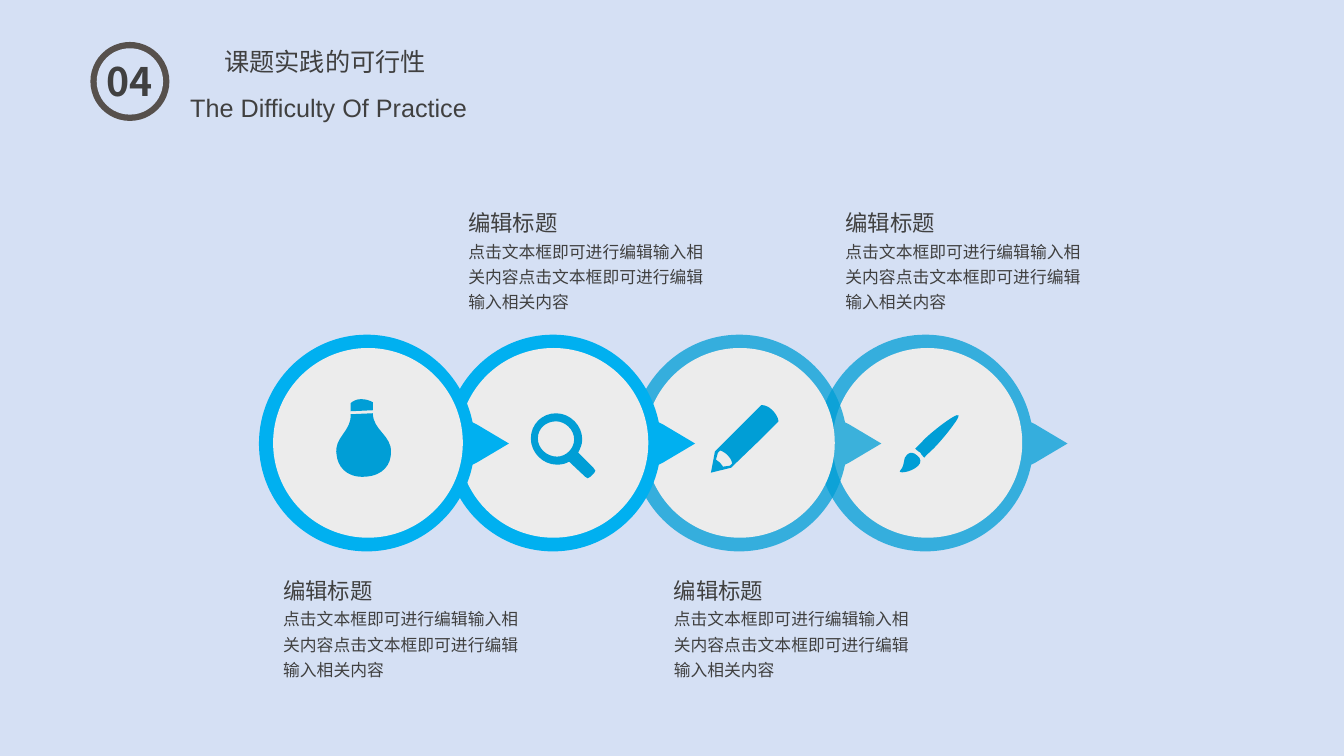
from lxml.etree import SubElement
from pptx import Presentation
from pptx.dml.color import RGBColor
from pptx.enum.shapes import MSO_SHAPE
from pptx.enum.text import MSO_ANCHOR, MSO_AUTO_SIZE, PP_ALIGN
from pptx.oxml.ns import qn
from pptx.util import Pt

CHINESE_FONT = "Noto Sans CJK SC"
DARK, BLUE, BRIGHT_BLUE = "404040", "009ED6", "00B0F0"
BACKGROUND, RING_BROWN, DISC_GREY = "D5E0F4", "56504C", "ECECEC"
BODY = "点击文本框即可进行编辑输入相关内容点击文本框即可进行编辑输入相关内容"

# Outlines are lists of contours, in hundredths of an inch from the ring centre.
# A pair is a straight segment; six numbers are a cubic curve.
POINTER_RING = [[
    (141, 0), (109, -19, 109, -19, 109, -19), (105, -21, 105, -21, 105, -21),
    (95, -70, 52, -108, 0, -108), (-59, -108, -107, -59, -107, 0),
    (-107, 59, -59, 107, 0, 107), (52, 107, 95, 70, 105, 21),
    (109, 19, 109, 19, 109, 19), (141, 0),
]]
BULB_CAP = [
    [(6, -41), (2, -43, -1, -44, -6, -44), (-10, -44, -14, -42, -16, -40),
     (-16, -32), (6, -33), (6, -33, 6, -41, 6, -41)],
]
BULB = [
    [(-16, -29), (-15, -12, -33, -6, -30, 11), (-29, 22, -21, 34, -2, 33),
     (17, 32, 24, 20, 24, 9), (25, -8, 6, -13, 6, -30),
     (6, -30, -16, -29, -16, -29)],
]
MAGNIFIER = [
    [(-15, -5), (-15, -15, -7, -22, 3, -22), (12, -22, 21, -14, 21, -4),
     (21, 5, 13, 13, 4, 13), (-6, 13, -15, 5, -15, -5)],
    [(40, 24), (25, 9), (27, 5, 29, 1, 29, -4), (29, -18, 17, -30, 3, -30),
     (-11, -30, -22, -19, -22, -5), (-22, 9, -10, 21, 4, 21),
     (8, 21, 13, 20, 16, 18), (32, 33), (33, 35, 36, 35, 37, 33),
     (41, 29), (43, 28, 42, 26, 40, 24)],
]
PENCIL = [
    [(-9, 22), (-16, 23), (-17, 22, -17, 21, -19, 19),
     (-20, 18, -22, 17, -23, 16), (-21, 9), (-19, 7),
     (-19, 7, -16, 7, -11, 12), (-7, 16, -7, 20, -7, 20),
     (-7, 20, -9, 22, -9, 22)],
    [(33, -33), (27, -39, 22, -38, 22, -38), (1, -17), (-24, 8), (-28, 29),
     (-8, 24), (17, 0), (39, -22), (39, -22, 39, -27, 33, -33)],
]
BRUSH = [
    [(33, -28), (31, -31, 4, -10, -3, -2), (-7, 2, -9, 4, -10, 5),
     (-10, 6, -10, 6, -9, 6), (-8, 7, -7, 8, -5, 9), (-4, 11, -3, 12, -2, 13),
     (-2, 13, -2, 14, -1, 14), (0, 12, 2, 11, 6, 7), (14, 0, 35, -26, 33, -28)],
    [(-18, 11), (-23, 15, -19, 20, -25, 27), (-28, 30, -14, 29, -7, 22),
     (-4, 19, -4, 15, -8, 12), (-11, 9, -15, 8, -18, 11)],
]


def paint(fill, color, opacity=100):
    """Make a shape, font or background fill solid; opacity is in percent."""
    fill.solid()
    fill.fore_color.rgb = RGBColor.from_string(color)
    if opacity < 100:
        color_element = fill._xPr.find(qn("a:solidFill"))[0]
        SubElement(color_element, qn("a:alpha"), val=str(opacity * 1000))


def write(shape, box, text, size, font_name=CHINESE_FONT, bold=False,
          alignment=PP_ALIGN.LEFT, line_spacing=1.0):
    shape.left, shape.top, shape.width, shape.height = map(Pt, box)
    frame = shape.text_frame
    frame.text = text
    frame.word_wrap = True
    frame.auto_size = MSO_AUTO_SIZE.SHAPE_TO_FIT_TEXT
    frame.vertical_anchor = MSO_ANCHOR.TOP
    paragraph = frame.paragraphs[0]
    paragraph.alignment = alignment
    paragraph.line_spacing = line_spacing
    font = paragraph.runs[0].font
    font.size, font.name, font.bold = Pt(size), font_name, bold
    paint(font.fill, DARK)
    SubElement(font._element, qn("a:ea"), typeface=font_name)


presentation = Presentation()
presentation.slide_width, presentation.slide_height = Pt(960), Pt(540)
slide = presentation.slides.add_slide(presentation.slide_layouts[5])
shapes = slide.shapes
paint(slide.background.fill, BACKGROUND)

# Header
for inset, color in ((0, RING_BROWN), (4.5, BACKGROUND)):
    diameter = 56.4 - 2 * inset
    badge = shapes.add_shape(MSO_SHAPE.OVAL, Pt(64.6 + inset), Pt(30 + inset),
                             Pt(diameter), Pt(diameter))
    paint(badge.fill, color)
write(shapes.add_textbox(0, 0, 0, 0), (66.7, 37.4, 52, 41), "04", 28,
      bold=True, alignment=PP_ALIGN.CENTER)
write(shapes.title, (37.2, 29.5, 390, 29), "课题实践的可行性", 18,
      alignment=PP_ALIGN.CENTER)
subtitle = shapes.add_shape(MSO_SHAPE.SNIP_1_RECTANGLE, 0, 0, 0, 0)
subtitle.adjustments[0] = 0
subtitle.fill.background()
write(subtitle, (39.6, 62.6, 395.3, 29), "The Difficulty Of Practice ", 18,
      "Arial", alignment=PP_ALIGN.CENTER)

# Chain of rings, drawn from the last to the first so that each overlaps the next
steps = [([BULB_CAP, BULB], BRIGHT_BLUE, 100, 195.1),
         ([MAGNIFIER], BRIGHT_BLUE, 100, 327.6),
         ([PENCIL], BLUE, 75, 460.8),
         ([BRUSH], BLUE, 75, 594.7)]
center_y, unit = 316.8, 0.72
for index, (icon, ring_color, opacity, disc_left) in reversed(list(enumerate(steps))):
    center_x = 262 + 133 * index
    for outline in [POINTER_RING] + icon:
        builder = None
        for contour in outline:
            points = [(Pt(center_x + unit * segment[i]), Pt(center_y + unit * segment[i + 1]))
                      for segment in contour for i in range(0, len(segment), 2)]
            if builder is None:
                builder = shapes.build_freeform(*points[0])
            else:
                builder.move_to(*points[0])
            builder.add_line_segments(points[1:], close=True)
        freeform = builder.convert_to_shape()

        # Each curve was laid down as three lines: join them into one cubic
        geometry = freeform._element.find(".//" + qn("a:path"))
        lines = iter(geometry.findall(qn("a:lnTo")))
        for contour in outline:
            for segment in contour[1:]:
                line = next(lines)
                if len(segment) == 6:
                    line.tag = qn("a:cubicBezTo")
                    for extra in (next(lines), next(lines)):
                        line.append(extra[0])
                        geometry.remove(extra)

        if outline is POINTER_RING:
            paint(freeform.fill, ring_color, opacity)
            disc = shapes.add_shape(MSO_SHAPE.OVAL, Pt(disc_left), Pt(248.6),
                                    Pt(135.5), Pt(135.5))
            paint(disc.fill, DISC_GREY)
        else:
            paint(freeform.fill, BLUE)

# Captions alternate below and above the rings
for left, top in ((195.2, 408.6), (327.4, 145.8), (474.2, 408.6), (596.8, 145.8)):
    write(shapes.add_textbox(0, 0, 0, 0), (left, top + 19.4, 193, 62), BODY, 12,
          line_spacing=1.25)
    write(shapes.add_textbox(0, 0, 0, 0), (left, top, 88, 26.6), "编辑标题", 16)

for shape in shapes:
    shape.line.fill.background()
    shape.shadow.inherit = False

presentation.save("out.pptx")
